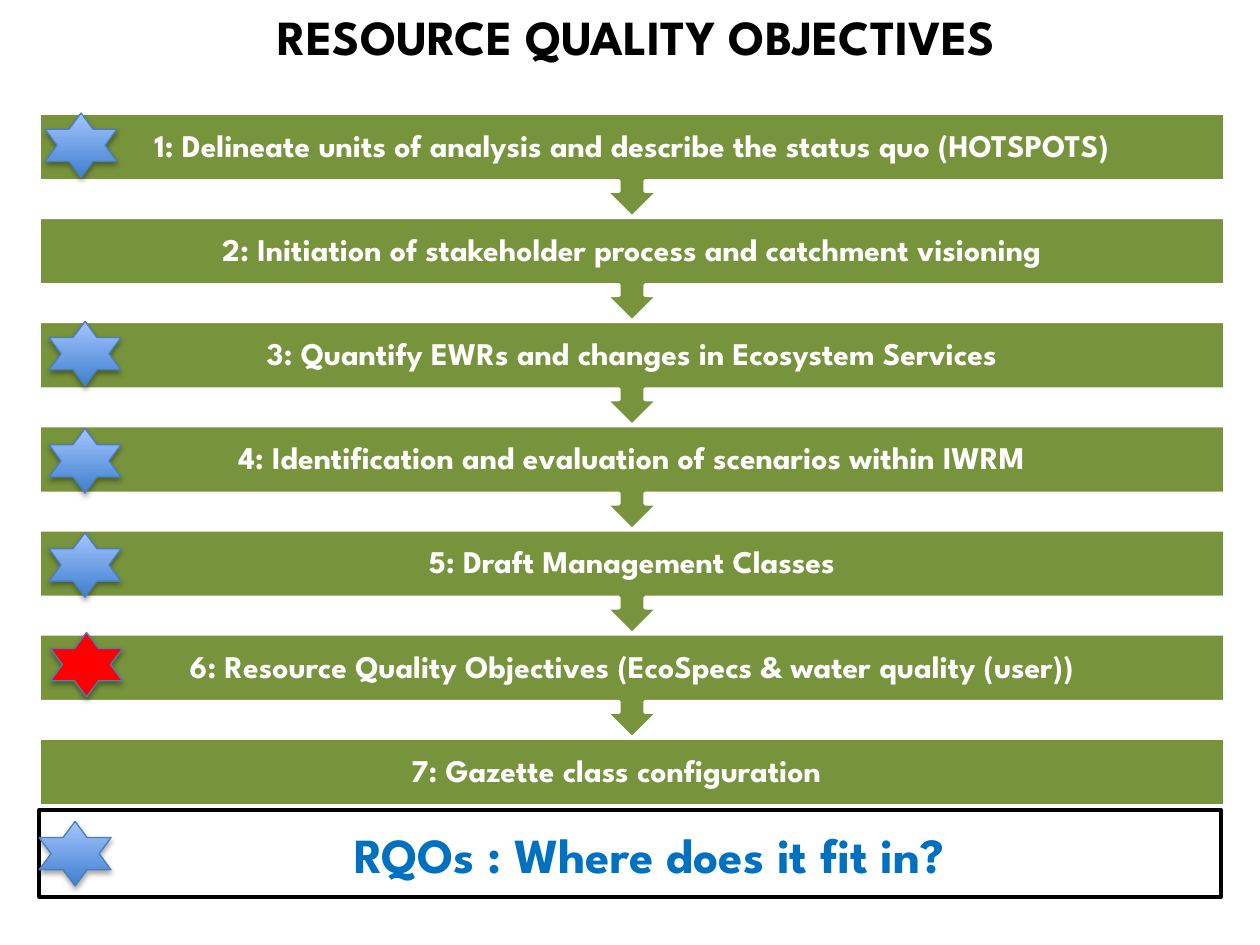
from lxml.etree import SubElement
from pptx import Presentation
from pptx.dml.color import RGBColor
from pptx.enum.shapes import MSO_SHAPE
from pptx.enum.text import MSO_ANCHOR, MSO_AUTO_SIZE, PP_ALIGN
from pptx.oxml.ns import qn
from pptx.util import Cm, Pt

TITLE = "RESOURCE QUALITY OBJECTIVES"
QUESTION = "RQOs : Where does it fit in?"
STEPS = [
    "1: Delineate units of analysis and describe the status quo (HOTSPOTS)",
    "2: Initiation of stakeholder process and catchment visioning",
    "3: Quantify EWRs and changes in Ecosystem Services",
    "4: Identification and evaluation of scenarios within IWRM",
    "5: Draft Management Classes",
    "6: Resource Quality Objectives (EcoSpecs & water quality (user))",
    "7: Gazette class configuration",
]
# left and top in cm, and a plain fill colour or None for the blue gradient
STARS = [
    (0.99, 6.48, None),
    (0.79, 16.56, None),
    (0.91, 2.28, None),
    (1.02, 12.75, "FF0000"),
    (0.99, 8.64, None),
    (0.99, 10.74, None),
]

FONT = "League Spartan"
GREEN, WHITE, BLACK = "77933C", "FFFFFF", "000000"
LEFT, TOP, WIDTH = 0.79, 2.28, 23.9
PITCH, BAR_HEIGHT = 2.1, 1.37
INSET = 0.36


def color(hex_value):
    return RGBColor.from_string(hex_value)


def box(left, top, width, height):
    return [Cm(value) for value in (left, top, width, height)]


def write(shape, text, size, text_color, anchor=MSO_ANCHOR.MIDDLE,
          insets=(0.25, 0.13, 0.25, 0.13), spacing=None):
    """Put one bold centred paragraph in a shape; insets are left, top, right, bottom."""
    frame = shape.text_frame
    frame.word_wrap = True
    frame.auto_size = MSO_AUTO_SIZE.NONE
    frame.vertical_anchor = anchor
    (frame.margin_left, frame.margin_top,
     frame.margin_right, frame.margin_bottom) = box(*insets)
    paragraph = frame.paragraphs[0]
    paragraph.alignment = PP_ALIGN.CENTER
    paragraph.line_spacing = spacing
    run = paragraph.add_run()
    run.text = text
    run.font.name = FONT
    run.font.size = Pt(size)
    run.font.bold = True
    run.font.color.rgb = color(text_color)


def add_shape(slide, kind, place, line, line_width, fill=None):
    shape = slide.shapes.add_shape(kind, *box(*place))
    shape.shadow.inherit = False
    shape.line.color.rgb = color(line)
    shape.line.width = Pt(line_width)
    if fill:
        shape.fill.solid()
        shape.fill.fore_color.rgb = color(fill)
    return shape


def add_step(slide, index, text):
    top = TOP + index * PITCH
    is_last = index == len(STEPS) - 1
    if is_last:
        add_shape(slide, MSO_SHAPE.RECTANGLE, (LEFT, top, WIDTH, BAR_HEIGHT), WHITE, 2, GREEN)
    else:
        callout = add_shape(slide, MSO_SHAPE.UP_ARROW_CALLOUT,
                            (LEFT, top, WIDTH, PITCH), WHITE, 2, GREEN)
        callout.rotation = 180
    label = slide.shapes.add_textbox(*box(LEFT, top, WIDTH, BAR_HEIGHT))
    right_inset = INSET + 0.63 if is_last else INSET
    write(label, text, 18, WHITE, insets=(INSET, INSET, right_inset, INSET), spacing=0.9)


def add_star(slide, left, top, fill):
    star = add_shape(slide, MSO_SHAPE.STAR_6_POINT, (left, top, 1.45, 1.3), "4B7EBC", 0.75, fill)
    if not fill:
        star.fill.gradient()
        star.fill.gradient_angle = 90
        for stop, stop_color in zip(star.fill.gradient_stops, ("3F80CE", "A4C4FF")):
            stop.color.rgb = color(stop_color)
    effects = star._element.spPr.find(qn("a:effectLst"))
    shadow = SubElement(effects, qn("a:outerShdw"), blurRad=str(Pt(3.1)),
                        dist=str(Pt(1.8)), dir="5400000", rotWithShape="0")
    shadow_color = SubElement(shadow, qn("a:srgbClr"), val=BLACK)
    SubElement(shadow_color, qn("a:alpha"), val="35000")


def main():
    presentation = Presentation()
    presentation.slide_width, presentation.slide_height = Cm(25.4), Cm(19.05)
    slide = presentation.slides.add_slide(presentation.slide_layouts[5])

    title = slide.shapes.title
    title.left, title.top, title.width, title.height = box(1.27, 0, 23.11, 1.45)
    write(title, TITLE, 28, BLACK, anchor=MSO_ANCHOR.TOP)

    # Last step first, so that each arrow lies over the bar below it
    for index, text in reversed(list(enumerate(STEPS))):
        add_step(slide, index, text)

    question = add_shape(slide, MSO_SHAPE.RECTANGLE, (LEFT, 16.33, 23.83, 1.75), BLACK, 2, WHITE)
    write(question, QUESTION, 28, "0070C0", insets=(1.02, 0.13, 0.25, 0.13))

    for left, top, fill in STARS:
        add_star(slide, left, top, fill)

    presentation.save("out.pptx")


if __name__ == "__main__":
    main()
